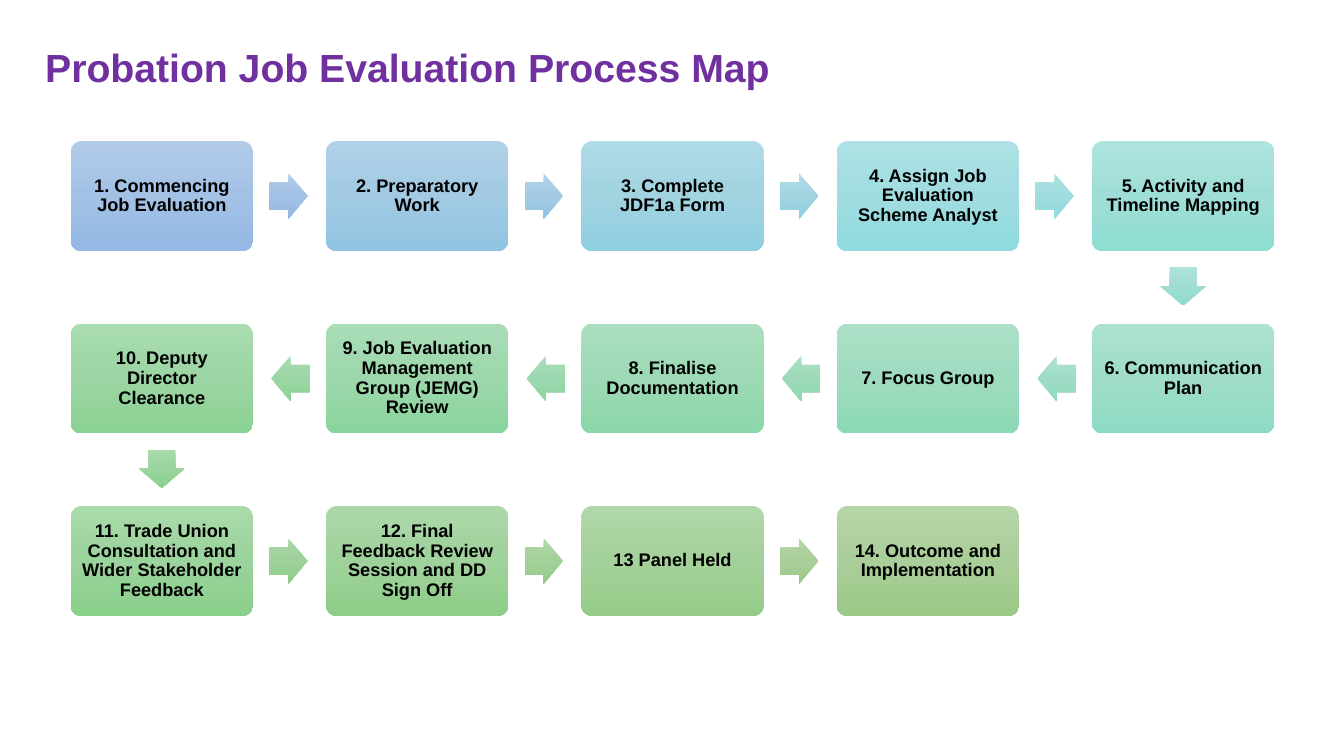
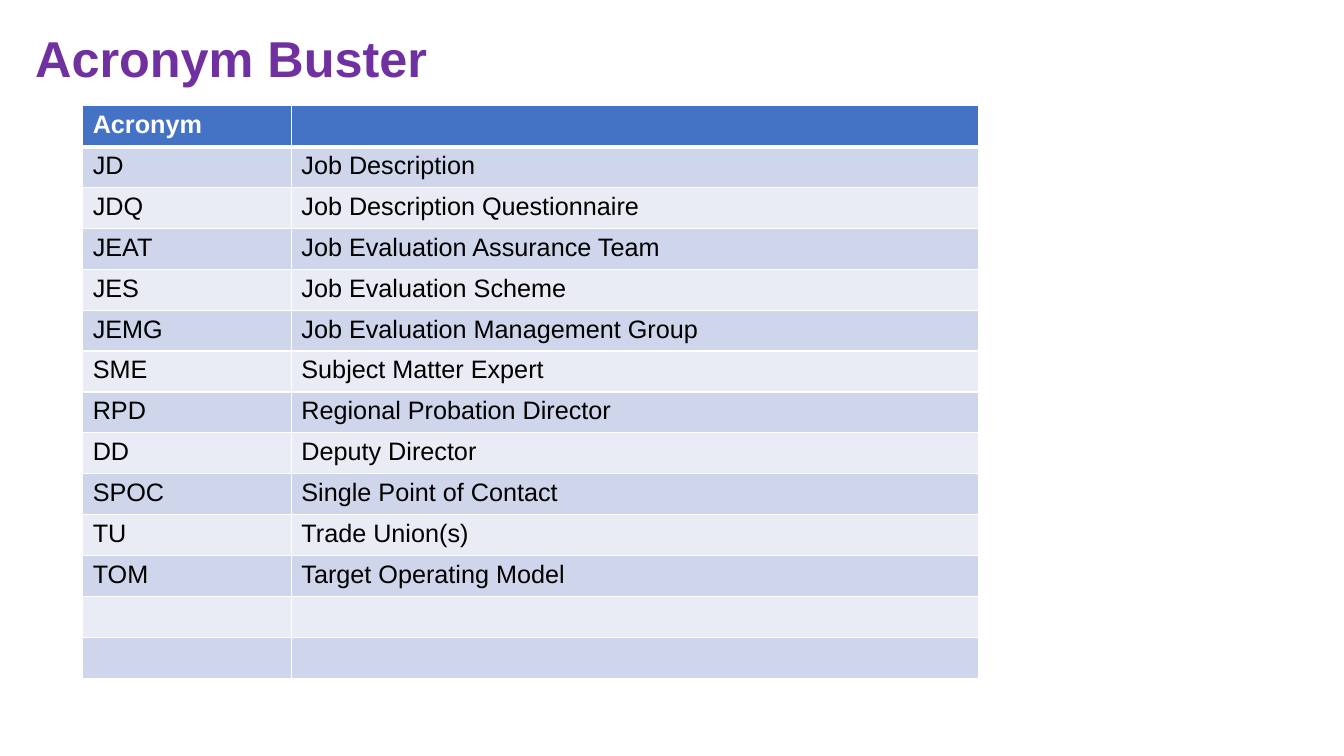
import lxml.etree
import pptx
import pptx.dml.color
import pptx.enum.shapes
import pptx.enum.text
import pptx.oxml.ns
import pptx.util
from dataclasses import dataclass

Inches = pptx.util.Inches
Pt = pptx.util.Pt
SHAPES = pptx.enum.shapes.MSO_SHAPE
ALIGN = pptx.enum.text.PP_ALIGN
MIDDLE = pptx.enum.text.MSO_ANCHOR.MIDDLE


@dataclass(frozen=True)
class Theme:
    font: str = "Arial"
    title: str = "7030A0"
    ink: str = "000000"
    white: str = "FFFFFF"
    header: str = "4472C4"
    bands: tuple = ("CFD5EA", "E9EBF5")
    map_title_size: int = 28
    list_title_size: int = 36
    step_size: int = 13
    table_size: int = 18
    line_spacing: float = 0.9
    border: int = 1
    header_border: int = 3


THEME = Theme()

# Each step: wording, then its top, middle and bottom gradient colours
STEPS = [
    ("1. Commencing Job Evaluation", "B1CBE9 A3C1E5 93B9E4"),
    ("2. Preparatory Work", "B0D2E8 A2CAE3 91C4E2"),
    ("3. Complete JDF1a Form", "AFDAE7 A1D3E1 90CFE1"),
    ("4. Assign Job Evaluation Scheme Analyst", "AEE2E5 A0DCE0 8FDBDF"),
    ("5. Activity and Timeline Mapping", "ADE4DD 9FDED6 8EDDD3"),
    ("6. Communication Plan", "ACE2D2 9FDCCA 8DDBC4"),
    ("7. Focus Group", "ACE1C8 9EDBBF 8CD9B6"),
    ("8. Finalise Documentation", "ABDFBF 9DD9B4 8BD7A9"),
    ("9. Job Evaluation Management Group (JEMG) Review", "AADDB7 9CD7AB 8AD59D"),
    ("10. Deputy Director Clearance", "A9DCB0 9CD5A3 8AD293"),
    ("11. Trade Union Consultation and Wider Stakeholder Feedback",
     "A9DAAA 9BD39C 89D08A"),
    ("12. Final Feedback Review Session and DD Sign Off", "ACD8A8 9FD19B 8ECE88"),
    ("13 Panel Held", "B0D7A8 A4D09A 95CC88"),
    ("14. Outcome and Implementation", "B5D5A7 AACE9A 9CC987"),
]

ACRONYMS = [
    ("Acronym", ""),
    ("JD", "Job Description"),
    ("JDQ", "Job Description Questionnaire"),
    ("JEAT", "Job Evaluation Assurance Team"),
    ("JES", "Job Evaluation Scheme"),
    ("JEMG", "Job Evaluation Management Group"),
    ("SME", "Subject Matter Expert"),
    ("RPD", "Regional Probation Director"),
    ("DD", "Deputy Director"),
    ("SPOC", "Single Point of Contact"),
    ("TU", "Trade Union(s)"),
    ("TOM", "Target Operating Model"),
    ("", ""),
    ("", ""),
]


def apply(target, formats):
    for attribute, value in formats.items():
        setattr(target, attribute, value)


def rgb(colour):
    return pptx.dml.color.RGBColor.from_string(colour)


def write(frame, wording, size, colour, bold, **paragraph_formats):
    paragraph = frame.paragraphs[0]
    apply(paragraph, paragraph_formats)
    run = paragraph.add_run()
    run.text = wording
    apply(run.font, {"name": THEME.font, "size": Pt(size), "bold": bold})
    run.font.color.rgb = rgb(colour)


def add_title(slide, box, wording, size):
    frame = slide.shapes.add_textbox(*map(Inches, box)).text_frame
    apply(frame, {"word_wrap": True, "vertical_anchor": MIDDLE})
    write(frame, wording, size, THEME.title, True,
          line_spacing=THEME.line_spacing)


def fill_downwards(shape, colours):
    """Fill with evenly spaced gradient stops, the first colour on top."""
    shape.fill.gradient()
    shape.fill.gradient_angle = 270
    qn = pptx.oxml.ns.qn
    stops = next(shape.element.iter(qn("a:gsLst")))
    for stop in list(stops):
        stops.remove(stop)
    for index, colour in enumerate(colours):
        position = round(100000 * index / (len(colours) - 1))
        stop = lxml.etree.SubElement(stops, qn("a:gs"), pos=str(position))
        lxml.etree.SubElement(stop, qn("a:srgbClr"), val=colour)


def add_gradient_shape(slide, preset, box, colours, adjustments):
    shape = slide.shapes.add_shape(preset, *map(Inches, box))
    for index, value in enumerate(adjustments):
        shape.adjustments[index] = value
    shape.shadow.inherit = False
    shape.line.fill.background()
    fill_downwards(shape, colours)
    return shape


def blend(start, end, share):
    pairs = ((int(start[i:i + 2], 16), int(end[i:i + 2], 16)) for i in (0, 2, 4))
    return "".join(f"{round(a + (b - a) * share):02X}" for a, b in pairs)


def arrow_colours(index):
    """Spread the arrows, one fewer than the steps, over the step colours."""
    last_step = len(STEPS) - 1
    place = index * last_step / (last_step - 1)
    before = min(int(place), last_step - 1)
    pairs = zip(STEPS[before][1].split(), STEPS[before + 1][1].split())
    return [blend(start, end, place - before) for start, end in pairs]


def add_step(slide, box, wording, colours):
    step = add_gradient_shape(slide, SHAPES.ROUNDED_RECTANGLE, box, colours, [0.1])
    frame = step.text_frame
    margins = {f"margin_{side}": Inches(0.08)
               for side in ("left", "right", "top", "bottom")}
    apply(frame, {"word_wrap": True, "vertical_anchor": MIDDLE, **margins})
    write(frame, wording, THEME.step_size, THEME.ink, True,
          alignment=ALIGN.CENTER, line_spacing=THEME.line_spacing)


def add_arrow(slide, step_box, direction, colours):
    """Place an arrow just outside the step, pointing in the direction."""
    left, top, width, height = step_box
    length, breadth, gap = 0.38, 0.45, 0.16
    middle = top + (height - breadth) / 2
    preset, box = {
        "right": (SHAPES.RIGHT_ARROW, (left + width + gap, middle, length, breadth)),
        "left": (SHAPES.LEFT_ARROW, (left - gap - length, middle, length, breadth)),
        "down": (SHAPES.DOWN_ARROW, (left + (width - breadth) / 2,
                                     top + height + gap, breadth, length)),
    }[direction]
    add_gradient_shape(slide, preset, box, colours, [0.6, 0.5])


def add_process_map(slide, box, columns=5, rows=3):
    """Lay the steps out in rows that run right, then left, then right."""
    left, top, width, height = box
    step_width, step_height = 1.81, 1.09
    column_pitch = (width - step_width) / (columns - 1)
    row_pitch = (height - step_height) / (rows - 1)
    for index, (wording, colours) in enumerate(STEPS):
        row, place = divmod(index, columns)
        leftwards = row % 2 == 1
        column = columns - 1 - place if leftwards else place
        step_box = (left + column * column_pitch, top + row * row_pitch,
                    step_width, step_height)
        add_step(slide, step_box, wording, colours.split())
        if index < len(STEPS) - 1:
            turn = place == columns - 1
            direction = "down" if turn else "left" if leftwards else "right"
            add_arrow(slide, step_box, direction, arrow_colours(index))


def set_borders(cell, widths):
    qn = pptx.oxml.ns.qn
    properties = cell._tc.get_or_add_tcPr()
    for index, (side, width) in enumerate(widths.items()):
        line = lxml.etree.Element(qn(f"a:ln{side}"), w=str(Pt(width)))
        solid = lxml.etree.SubElement(line, qn("a:solidFill"))
        lxml.etree.SubElement(solid, qn("a:srgbClr"), val=THEME.white)
        properties.insert(index, line)


def add_acronym_table(slide, box, column_widths):
    table = slide.shapes.add_table(
        len(ACRONYMS), len(column_widths), *map(Inches, box)).table
    for column, width in zip(table.columns, column_widths):
        column.width = Inches(width)
    for row, entries in enumerate(ACRONYMS):
        heading = row == 0
        fill = THEME.header if heading else THEME.bands[(row - 1) % 2]
        ink = THEME.white if heading else THEME.ink
        widths = dict.fromkeys("LRTB", THEME.border)
        if row < 2:
            widths["B" if heading else "T"] = THEME.header_border
        for column, wording in enumerate(entries):
            cell = table.cell(row, column)
            cell.fill.solid()
            cell.fill.fore_color.rgb = rgb(fill)
            set_borders(cell, widths)
            if wording:
                write(cell.text_frame, wording, THEME.table_size, ink, heading)


def build_map_slide(slide):
    add_title(slide, (0.35, 0.25, 11.18, 0.89),
              "Probation Job Evaluation Process Map", THEME.map_title_size)
    add_process_map(slide, (0.7, 1.4, 11.94, 4.71))


def build_acronym_slide(slide):
    add_title(slide, (0.25, 0.12, 13.08, 0.98),
              "Acronym Buster", THEME.list_title_size)
    add_acronym_table(slide, (0.82, 1.05, 8.89, 5.68), (2.07, 6.82))


def main():
    presentation = pptx.Presentation()
    apply(presentation, {"slide_width": Inches(13.33), "slide_height": Inches(7.5)})
    blank = presentation.slide_layouts[6]
    for build in (build_map_slide, build_acronym_slide):
        build(presentation.slides.add_slide(blank))
    presentation.save("out.pptx")


if __name__ == "__main__":
    main()
